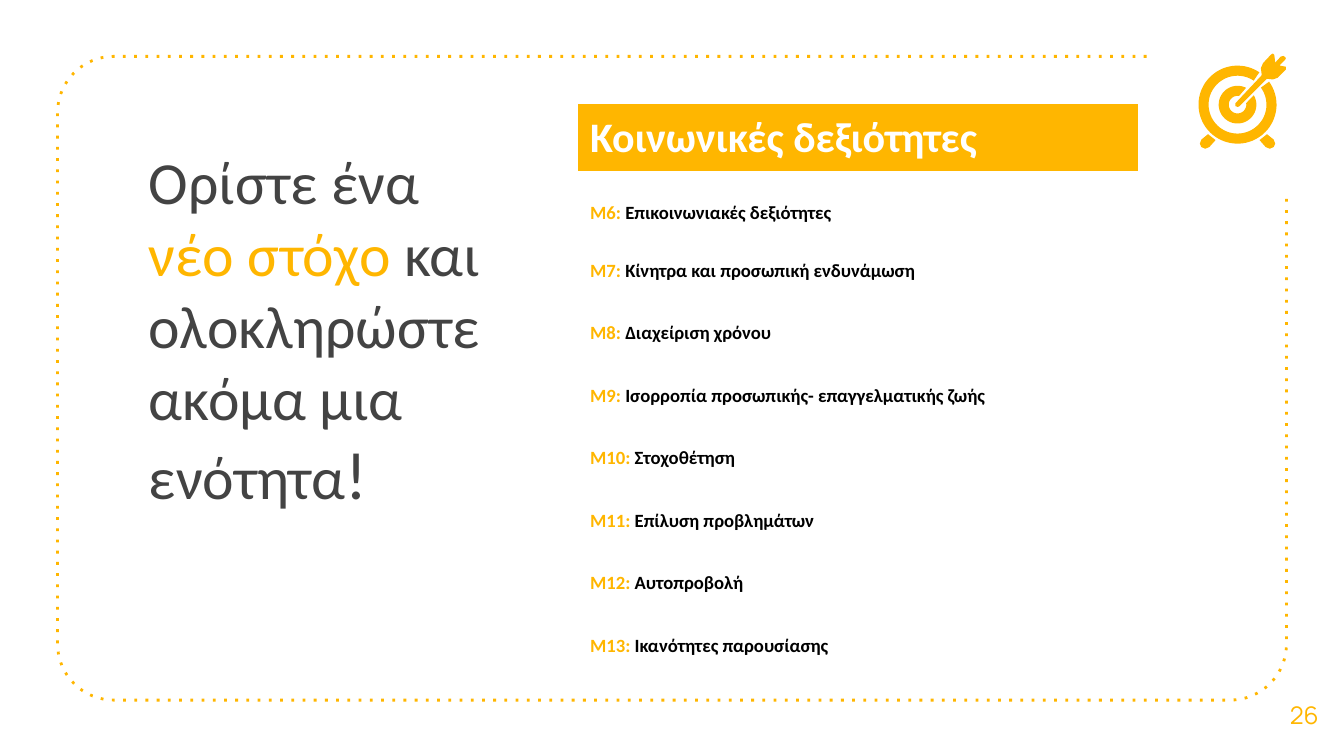
import math
import pptx
import pptx.util
import pptx.dml.color
import pptx.enum.dml
import pptx.enum.text
import pptx.oxml.ns

Pt = pptx.util.Pt
RGB = pptx.dml.color.RGBColor
GOLD = RGB(0xFF, 0xB6, 0x00)
GREY = RGB(0x43, 0x43, 0x43)
WHITE = RGB(0xFF, 0xFF, 0xFF)
BLACK = RGB(0, 0, 0)
ANCHOR = pptx.enum.text.MSO_ANCHOR
ALIGN = pptx.enum.text.PP_ALIGN

HEAD = "Κοινωνικές δεξιότητες"
SKILLS = [
    "Επικοινωνιακές δεξιότητες",
    "Κίνητρα και προσωπική ενδυνάμωση",
    "Διαχείριση χρόνου",
    "Ισορροπία προσωπικής- επαγγελματικής ζωής",
    "Στοχοθέτηση",
    "Επίλυση προβλημάτων",
    "Αυτοπροβολή",
    "Ικανότητες παρουσίασης",
]
TITLE = [
    ("Ορίστε ένα ", 32, GREY),
    ("νέο στόχο ", 32, GOLD),
    ("και ολοκληρώστε ακόμα μια ενότητα", 32, GREY),
    ("!", 36, GREY),
]
FOOT = [(-15.8, 15.8), (-19.4, 18.7), (-20.2, 20.9), (-19.4, 22.7),
        (-17.3, 23.6), (-15.1, 22.7), (-11.8, 19)]
DART = [(18.9, -27.4), (18, -26.9), (13.7, -22.3), (12.5, -19.6),
        (13, -15.8), (-1.2, -0.7), (-1.2, 0.7), (0, 1.2), (1, 0.9),
        (15.8, -13.9), (18.9, -13.5), (21.4, -14.4), (25.9, -18.9),
        (25.9, -20.3), (22.5, -21), (25.5, -24), (25.9, -25),
        (24.7, -26.1), (23.2, -25.8), (20.2, -22.5), (19.7, -26.6)]


def style(item, form):
    for name, value in form.items():
        setattr(item, name, value)


def write(para, runs, font, bold=False):
    for text, size, color in runs:
        run = para.add_run()
        run.text = text
        style(run.font, {"name": font, "size": Pt(size), "bold": bold})
        run.font.color.rgb = color


def add_text(shapes, box, runs, font, form, align=ALIGN.LEFT):
    frame = shapes.add_textbox(*map(Pt, box)).text_frame
    base = {"word_wrap": True}
    for side in ("left", "top", "right", "bottom"):
        base["margin_" + side] = Pt(7.2)
    style(frame, base | form)
    para = frame.paragraphs[0]
    para.alignment = align
    write(para, runs, font)


def arc(x, y, size, start, end, steps):
    turns = [math.radians(start + (end - start) * i / steps)
             for i in range(steps + 1)]
    return [(x + size * math.cos(t), y + size * math.sin(t)) for t in turns]


def add_path(shapes, dots, close):
    dots = [(Pt(x), Pt(y)) for x, y in dots]
    path = shapes.build_freeform(*dots[0])
    path.add_line_segments(dots[1:], close=close)
    shape = path.convert_to_shape()
    shape.shadow.inherit = False
    return shape


def add_frame(shapes):
    left, top, right, base, bend = 30.8, 30.2, 689.2, 375.1, 30.2
    dots = [(614.2, top)]
    dots += arc(left + bend, top + bend, bend, 270, 180, 16)
    dots += arc(left + bend, base - bend, bend, 180, 90, 16)
    dots += arc(right - bend, base - bend, bend, 90, 0, 16)
    dots.append((right, 105.1))
    shape = add_path(shapes, dots, False)
    shape.fill.background()
    shape.line.color.rgb = GOLD
    style(shape.line, {"width": Pt(1.5),
                       "dash_style": pptx.enum.dml.MSO_LINE.ROUND_DOT})
    dash = shape.element.find(".//" + pptx.oxml.ns.qn("a:prstDash"))
    dash.set("val", "dot")


def add_goal(shapes):
    group = shapes.add_group_shape()
    rings = [
        arc(0, 0, 20.9, -36, 304, 72) + arc(0, 0, 15.5, 304, -36, 72),
        arc(0, 0, 10.1, -30, 297, 48) + arc(0, 0, 4.7, 280, -10, 36),
    ]
    feet = [FOOT, [(-x, y) for x, y in FOOT]]
    for dots in rings + feet + [DART]:
        moved = [(663 + x, 56.1 + y) for x, y in dots]
        shape = add_path(group.shapes, moved, True)
        shape.fill.solid()
        shape.fill.fore_color.rgb = GOLD
        shape.line.fill.background()


def add_skills(shapes):
    high, row = 36.8, 33.5
    count = len(SKILLS) + 1
    table = shapes.add_table(count, 1, Pt(309), Pt(55.4), Pt(301),
                             Pt(high + row * len(SKILLS))).table
    style(table, {"first_row": False, "horz_banding": False})
    for i in range(count):
        table.rows[i].height = Pt(row if i else high)
        cell = table.cell(i, 0)
        gap = {0: 3.6, 1: 15.9}.get(i, 13.4)
        style(cell, {"margin_left": Pt(7.2), "margin_top": Pt(gap),
                     "margin_bottom": Pt(3.6),
                     "vertical_anchor": ANCHOR.TOP if i else ANCHOR.MIDDLE})
        if i:
            cell.fill.background()
            runs = [(f"M{i + 5}: ", 10, GOLD), (SKILLS[i - 1], 10, BLACK)]
        else:
            cell.fill.solid()
            cell.fill.fore_color.rgb = GOLD
            runs = [(HEAD, 22.5, WHITE)]
        write(cell.text_frame.paragraphs[0], runs, "Calibri", True)


def main():
    deck = pptx.Presentation()
    style(deck, {"slide_width": Pt(720), "slide_height": Pt(405)})
    shapes = deck.slides.add_slide(deck.slide_layouts[6]).shapes
    add_frame(shapes)
    add_text(shapes, (72.7, 70.6, 213.8, 67.7), TITLE, "Calibri",
             {"margin_right": Pt(16)})
    add_text(shapes, (677.5, 361.4, 42.5, 43.2), [("26", 13, GOLD)],
             "Manrope", {"vertical_anchor": ANCHOR.MIDDLE}, ALIGN.CENTER)
    add_goal(shapes)
    add_skills(shapes)
    deck.save("out.pptx")


if __name__ == "__main__":
    main()
